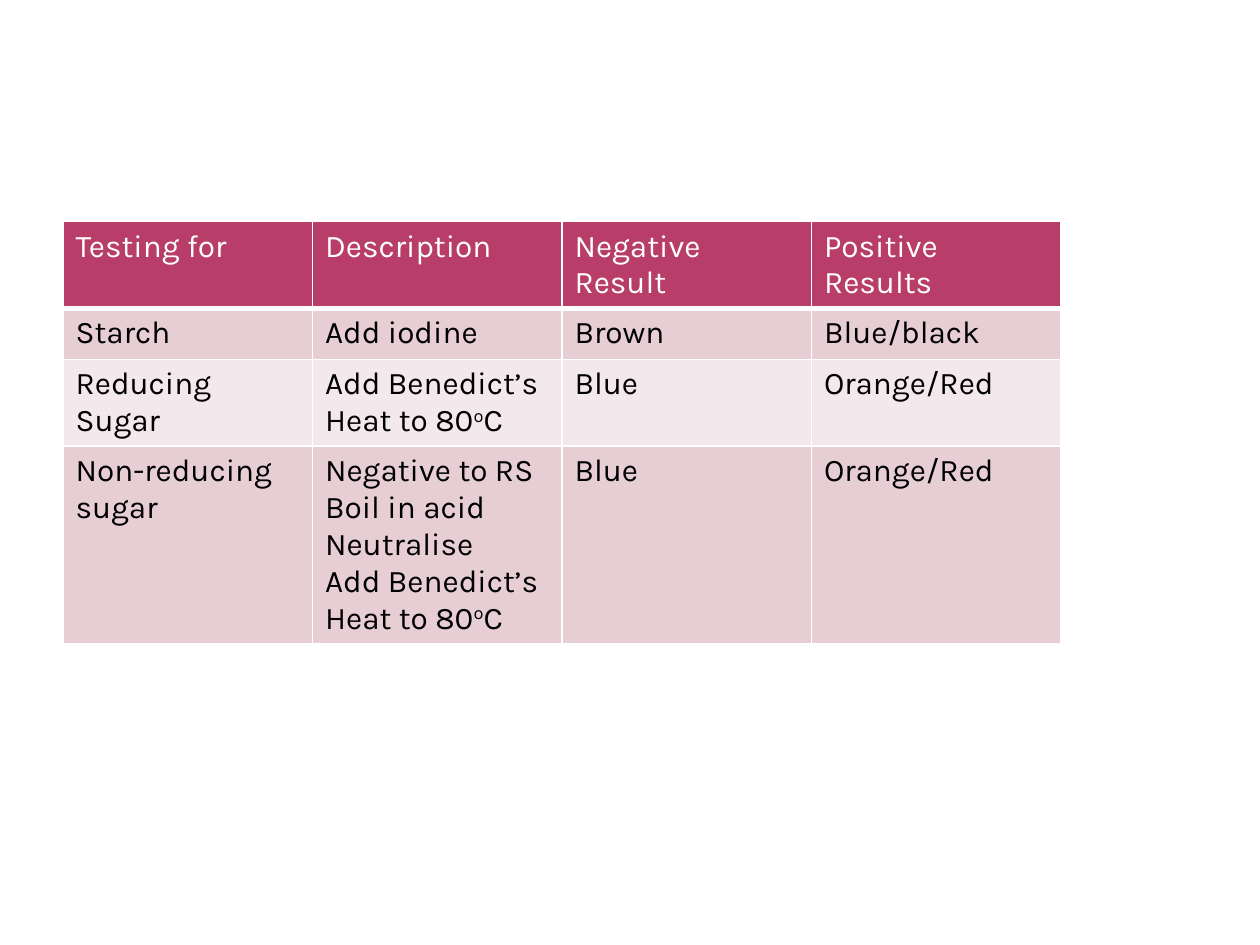
from pptx import Presentation
from pptx.dml.color import RGBColor
from pptx.oxml.ns import qn
from pptx.util import Pt
from lxml import etree

# Content: one list of lines per cell, bars set off a raised letter
HEAT = ["Add Benedict’s", "Heat to 80|o|C"]
ROWS = [
    [["Testing for"], ["Description"], ["Negative Result"], ["Positive Results"]],
    [["Starch"], ["Add iodine"], ["Brown"], ["Blue/black"]],
    [["Reducing Sugar"], HEAT, ["Blue"], ["Orange/Red"]],
    [["Non-reducing sugar"],
     ["Negative to RS", "Boil in acid", "Neutralise"] + HEAT,
     ["Blue"], ["Orange/Red"]],
]

COLORS = {"head": "B83D68", "odd": "E6CED4", "even": "F3E8EB",
          "white": "FFFFFF", "black": "000000"}
FONT, SIZE = "Karla", 18
LEFT, TOP = 36, 126.72
COL_W, ROW_H = 142.56, 29.2


def set_edges(cell, below):
    """Draw white cell borders; below is the width of the bottom one."""
    props = cell._tc.get_or_add_tcPr()
    for side, width in (("L", 1), ("R", 1), ("T", 1), ("B", below)):
        line = etree.SubElement(props, qn(f"a:ln{side}"), w=str(Pt(width)))
        fill = etree.SubElement(line, qn("a:solidFill"))
        etree.SubElement(fill, qn("a:srgbClr"), val=COLORS["white"])


def set_text(cell, lines, color):
    frame = cell.text_frame
    for i, line in enumerate(lines):
        para = frame.add_paragraph() if i else frame.paragraphs[0]
        for j, part in enumerate(line.split("|")):
            run = para.add_run()
            run.text = part
            run.font.name = FONT
            run.font.size = Pt(SIZE)
            run.font.bold = False
            run.font.color.rgb = RGBColor.from_string(COLORS[color])
            if j == 1:
                run._r.get_or_add_rPr().set("baseline", "30000")


# Slide
deck = Presentation()
deck.slide_width, deck.slide_height = Pt(720), Pt(540)
slide = deck.slides.add_slide(deck.slide_layouts[6])

# Table of food tests; rows grow to fit their text
count = len(ROWS[0])
table = slide.shapes.add_table(
    len(ROWS), count, Pt(LEFT), Pt(TOP),
    Pt(COL_W * count), Pt(ROW_H * len(ROWS))).table
for col in table.columns:
    col.width = Pt(COL_W)

for r, row in enumerate(ROWS):
    table.rows[r].height = Pt(ROW_H)
    shade = "head" if r == 0 else "odd" if r % 2 else "even"
    for c, lines in enumerate(row):
        cell = table.cell(r, c)
        set_edges(cell, 1 if r else 3)
        cell.fill.solid()
        cell.fill.fore_color.rgb = RGBColor.from_string(COLORS[shade])
        set_text(cell, lines, "black" if r else "white")

deck.save("out.pptx")
